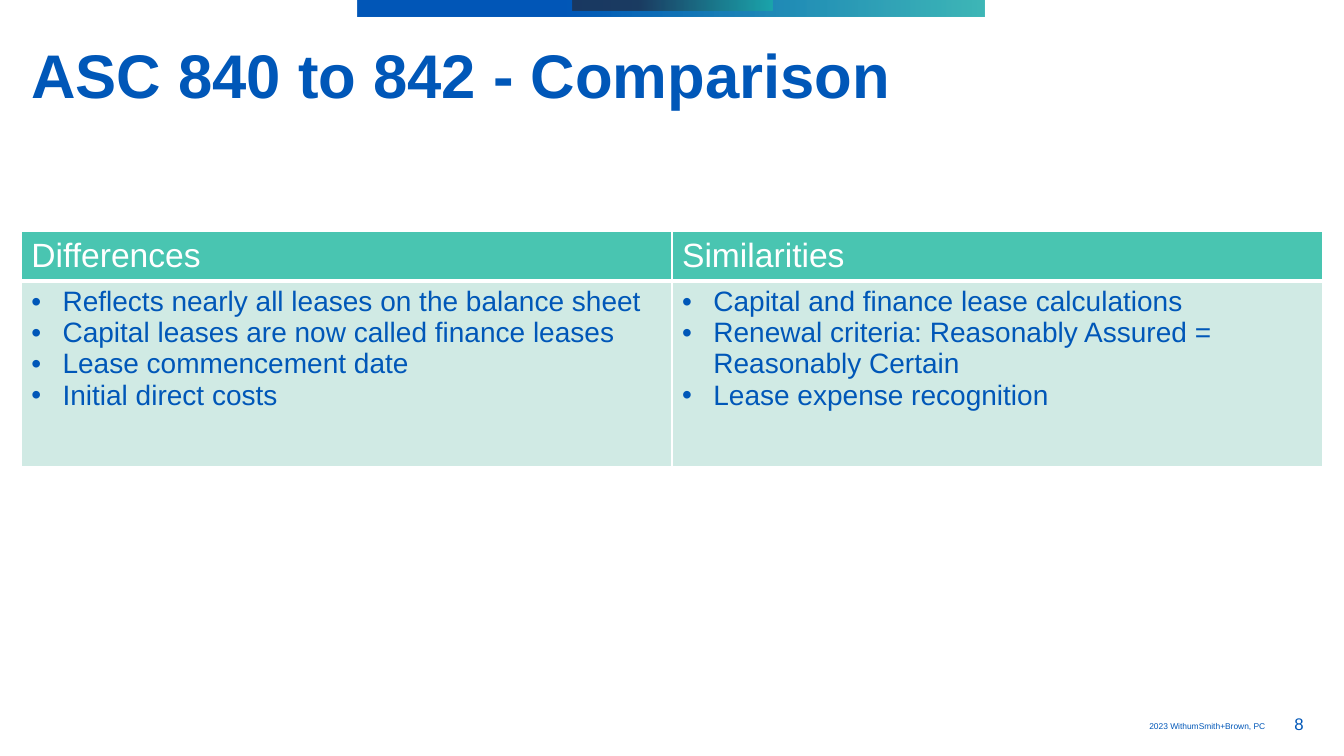
import pptx
import pptx.util
import pptx.oxml
import pptx.oxml.ns
import pptx.dml.color
import pptx.enum.shapes
import pptx.enum.text

BLUE = pptx.dml.color.RGBColor(0x00, 0x57, 0xB8)
NAVY = pptx.dml.color.RGBColor(0x1E, 0x34, 0x53)
TEAL = pptx.dml.color.RGBColor(0x1B, 0xAA, 0xAA)
MINT = pptx.dml.color.RGBColor(0x49, 0xC5, 0xB1)
PALE_MINT = pptx.dml.color.RGBColor(0xD0, 0xEA, 0xE4)
WHITE = pptx.dml.color.RGBColor(0xFF, 0xFF, 0xFF)

COMPARISON = {
    "Differences": [
        "Reflects nearly all leases on the balance sheet",
        "Capital leases are now called finance leases",
        "Lease commencement date",
        "Initial direct costs",
    ],
    "Similarities": [
        "Capital and finance lease calculations",
        "Renewal criteria: Reasonably Assured = Reasonably Certain",
        "Lease expense recognition",
    ],
}


class SlideBuilder:
    font_name = "Arial"
    bullet_indent = pptx.util.Inches(0.31)

    def __init__(self, presentation):
        self.width = presentation.slide_width
        self.height = presentation.slide_height
        self.slide = presentation.slides.add_slide(presentation.slide_layouts[5])

    def across(self, percent):
        return round(self.width * percent / 100)

    def down(self, percent):
        return round(self.height * percent / 100)

    def box(self, left, top, width, height):
        return self.across(left), self.down(top), self.across(width), self.down(height)

    def apply(self, target, values):
        for name, value in values.items():
            setattr(target, name, value)

    def set_text(self, paragraph, text, size, color, bold=False):
        paragraph.text = text
        values = {"name": self.font_name, "size": pptx.util.Pt(size), "bold": bold}
        self.apply(paragraph.font, values)
        paragraph.font.color.rgb = color

    def title(self, text, area):
        shape = self.slide.shapes.title
        self.apply(shape, dict(zip(("left", "top", "width", "height"), self.box(*area))))
        self.apply(shape.text_frame, {
            "word_wrap": True,
            "auto_size": pptx.enum.text.MSO_AUTO_SIZE.NONE,
            "vertical_anchor": pptx.enum.text.MSO_ANCHOR.TOP,
        })
        paragraph = shape.text_frame.paragraphs[0]
        self.set_text(paragraph, text, 44, BLUE, bold=True)
        self.apply(paragraph, {
            "alignment": pptx.enum.text.PP_ALIGN.LEFT, "line_spacing": 0.9})

    def gradient_bar(self, area, stops):
        shape = self.slide.shapes.add_shape(
            pptx.enum.shapes.MSO_SHAPE.RECTANGLE, *self.box(*area))
        shape.shadow.inherit = False
        shape.line.fill.background()
        shape.fill.gradient()
        shape.fill.gradient_angle = 0
        for stop, (position, color, _) in zip(shape.fill.gradient_stops, stops):
            stop.position = position
            stop.color.rgb = color
        colors = shape.element.spPr.iter(pptx.oxml.ns.qn("a:srgbClr"))
        for element, (_, _, opacity) in zip(colors, stops):
            alpha = pptx.oxml.parse_xml(
                f'<a:alpha {pptx.oxml.ns.nsdecls("a")} val="{opacity * 1000}"/>')
            element.append(alpha)

    def label(self, text, area, size, alignment, wrap):
        shape = self.slide.shapes.add_textbox(*self.box(*area))
        shape.text_frame.word_wrap = wrap
        paragraph = shape.text_frame.paragraphs[0]
        self.set_text(paragraph, text, size, BLUE)
        paragraph.alignment = alignment

    def bullet(self, paragraph):
        properties = paragraph._p.get_or_add_pPr()
        properties.set("marL", str(self.bullet_indent))
        properties.set("indent", str(-self.bullet_indent))
        namespace = pptx.oxml.ns.nsdecls("a")
        for content in (f'<a:buFont {namespace} typeface="Arial"/>',
                        f'<a:buChar {namespace} char="•"/>'):
            properties.append(pptx.oxml.parse_xml(content))

    def borders(self, cell, bottom):
        properties = cell._tc.get_or_add_tcPr()
        for index, (side, points) in enumerate(zip("LRTB", (1, 1, 1, bottom))):
            properties.insert(index, pptx.oxml.parse_xml(
                f'<a:ln{side} {pptx.oxml.ns.nsdecls("a")} w="{pptx.util.Pt(points)}">'
                f'<a:solidFill><a:srgbClr val="{WHITE}"/></a:solidFill></a:ln{side}>'))

    def cell(self, cell, lines, size, color, fill, bottom, bulleted):
        cell.fill.solid()
        cell.fill.fore_color.rgb = fill
        self.borders(cell, bottom)
        for index, line in enumerate(lines):
            frame = cell.text_frame
            paragraph = frame.add_paragraph() if index else frame.paragraphs[0]
            if bulleted:
                self.bullet(paragraph)
            self.set_text(paragraph, line, size, color)

    def comparison_table(self, content, left, top, width, row_heights):
        area = self.box(left, top, width, sum(row_heights))
        table = self.slide.shapes.add_table(2, len(content), *area).table
        for row, height in zip(table.rows, row_heights):
            row.height = self.down(height)
        for column, (heading, lines) in enumerate(content.items()):
            self.cell(table.cell(0, column), [heading], 24, WHITE, MINT, 3, False)
            self.cell(table.cell(1, column), lines, 20, BLUE, PALE_MINT, 1, True)


def main():
    presentation = pptx.Presentation()
    presentation.slide_width = pptx.util.Inches(13.33)
    presentation.slide_height = pptx.util.Inches(7.5)
    builder = SlideBuilder(presentation)
    align = pptx.enum.text.PP_ALIGN

    builder.gradient_bar((26.63, 0, 46.6, 2.2), [(0.33, BLUE, 100), (1, TEAL, 84)])
    builder.gradient_bar((42.6, 0, 14.85, 1.4), [(0.33, NAVY, 84), (1, TEAL, 84)])
    builder.title("ASC 840 to 842 - Comparison", (1.58, 5.33, 97, 18))
    builder.comparison_table(COMPARISON, 1.58, 30.67, 96.85, (6.5, 24.5))
    builder.label("2023 WithumSmith+Brown, PC", (84.77, 94.67, 10.28, 2.67),
                  6, align.LEFT, False)
    builder.label("8", (94.6, 93.73, 4.13, 4), 12, align.CENTER, True)
    presentation.save("out.pptx")


if __name__ == "__main__":
    main()
